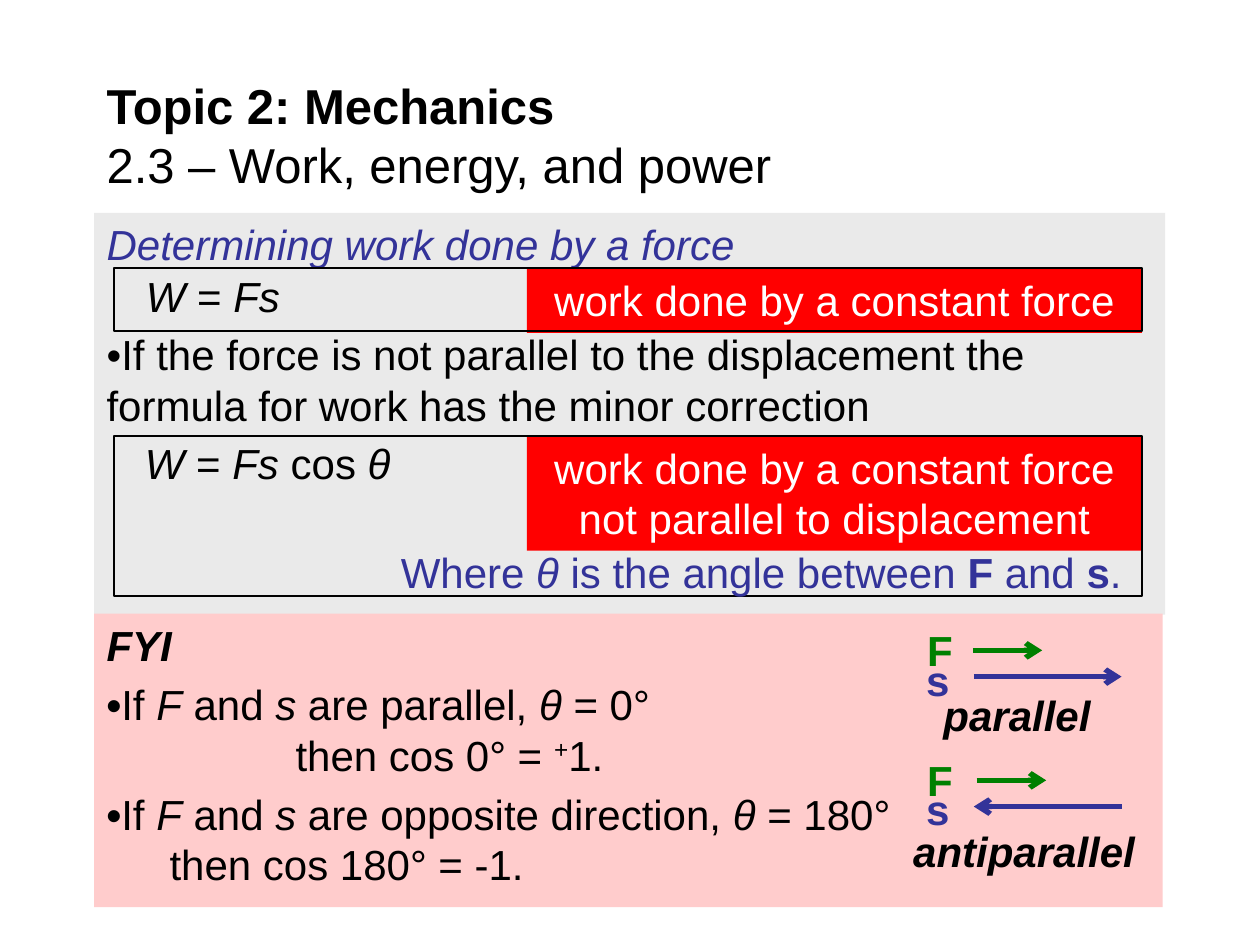
from pptx import Presentation
from pptx.dml.color import RGBColor
from pptx.enum.shapes import MSO_CONNECTOR, MSO_SHAPE
from pptx.enum.text import MSO_ANCHOR, PP_ALIGN
from pptx.oxml.ns import qn
from pptx.util import Cm, Pt
from lxml import etree

RECTANGLE = MSO_SHAPE.RECTANGLE
STRAIGHT = MSO_CONNECTOR.STRAIGHT
TOP, MIDDLE = MSO_ANCHOR.TOP, MSO_ANCHOR.MIDDLE
LEFT, CENTER, RIGHT = PP_ALIGN.LEFT, PP_ALIGN.CENTER, PP_ALIGN.RIGHT

COLORS = {
    "black": "000000",
    "white": "FFFFFF",
    "blue": "333399",
    "green": "008000",
    "red": "FF0000",
    "gray": "EAEAEA",
    "pink": "FFCCCC",
}

deck = Presentation()
deck.slide_width, deck.slide_height = Cm(25.4), Cm(19.05)
page = deck.slides.add_slide(deck.slide_layouts[6])


def add_box(place, fill=None, line=None, wrap=True, shape=True):
    """Add a rectangle or a text box at (left, top, width, height) in cm."""
    lengths = [Cm(value) for value in place]
    if shape:
        box = page.shapes.add_shape(RECTANGLE, *lengths)
        box.shadow.inherit = False
    else:
        box = page.shapes.add_textbox(*lengths)
    if fill:
        box.fill.solid()
        box.fill.fore_color.rgb = RGBColor.from_string(COLORS[fill])
    else:
        box.fill.background()
    if line:
        box.line.color.rgb = RGBColor.from_string(COLORS[line])
        box.line.width = Pt(1)
    else:
        box.line.fill.background()
    box.text_frame.word_wrap = wrap
    box.text_frame.vertical_anchor = TOP
    return box


def write(box, spans, color="black", size=24, align=LEFT, before=0, spacing=None):
    """Add a paragraph of (text, style) spans; styles: b bold, i italic, ^ raised."""
    frame = box.text_frame
    paragraph = frame.add_paragraph() if frame.text else frame.paragraphs[0]
    paragraph.alignment = align
    paragraph.space_before = Pt(before)
    if spacing:
        paragraph.line_spacing = spacing
    paragraph.font.name = "Arial"
    paragraph.font.size = Pt(size)
    paragraph.font.color.rgb = RGBColor.from_string(COLORS[color])
    for text, style in spans:
        if text == "\n":
            paragraph.add_line_break()
            continue
        span = paragraph.add_run()
        span.text = text
        span.font.bold = "b" in style
        span.font.italic = "i" in style
        if "^" in style:
            span.font._element.set("baseline", "30000")


# Main panel and title
panel = add_box((1.9, 4.29, 21.59, 8.1), fill="gray")
write(panel, [("Determining work done by a force", "i")], "blue", before=5)
write(panel, [("•If the force is not parallel to the displacement the "
               "formula for work has the minor correction", "")], before=34)

title = add_box((1.9, 1.47, 21.59, 2.49), shape=False)
title.text_frame.vertical_anchor = MIDDLE
write(title, [("Topic 2: Mechanics", "b"), ("\n", ""),
              ("2.3 – Work, energy, and power", "")], size=28)

# Formula rows: formula, its place, its meaning, top, red height, frame height
work = [("W", "i"), (" = ", "")]
formulas = [
    (work + [("Fs", "i")], (2.69, 5.44, 3.78, 0.89),
     "work done by a constant force", 5.41, 1.3, 1.27),
    (work + [("Fs ", "i"), ("cos ", ""), ("θ", "i")], (2.67, 8.81, 6.53, 0.89),
     "work done by a constant force not parallel to displacement", 8.79, 2.31, 3.23),
]
for formula, place, meaning, top, red_height, frame_height in formulas:
    write(add_box(place, shape=False), formula, before=5, spacing=0.9)
    label = add_box((10.62, top, 12.4, red_height), fill="red")
    write(label, [(meaning, "")], "white", align=CENTER)
    add_box((2.3, top, 20.73, frame_height), line="black")

angle_note = add_box((3, 11, 19.86, 1.07), shape=False)
write(angle_note, [("Where ", ""), ("θ", "i"), (" is the angle between ", ""),
                   ("F", "b"), (" and ", ""), ("s", "b"), (".", "")],
      "blue", align=RIGHT, before=5, spacing=0.9)

# FYI panel
fyi = add_box((1.9, 12.37, 21.54, 5.92), fill="pink")
write(fyi, [("FYI", "bi")], before=5)
cases = [
    ("parallel", "0°", [("\t\t\tthen cos 0° = ", ""), ("+", "^"), ("1.", "")]),
    ("opposite direction", "180°", [("\tthen cos 180° = -1.", "")]),
]
for relation, degrees, result in cases:
    write(fyi, [("•", "b"), ("If ", ""), ("F", "i"), (" and ", ""), ("s", "i"),
                (f" are {relation}, ", ""), ("θ", "i"), (f" = {degrees}", ""),
                ("\n", "")] + result, before=5)

# Vector pairs: name, top, label place, start of F, end of the s arrow with a head
pairs = [
    ("parallel", 12.47, (18.77, 13.77, 3.51, 1.3), 19.61, "tailEnd"),
    ("antiparallel", 15.09, (18.16, 16.51, 5.03, 1.3), 19.69, "headEnd"),
]
for name, top, label_place, force_start, displacement_head in pairs:
    arrows = [
        ("green", force_start, force_start + 1.4, top + 0.64, "tailEnd"),
        ("blue", 19.63, 22.61, top + 1.17, displacement_head),
    ]
    for color, start, end, height, head in arrows:
        arrow = page.shapes.add_connector(
            STRAIGHT, Cm(start), Cm(height), Cm(end), Cm(height))
        arrow.line.color.rgb = RGBColor.from_string(COLORS[color])
        arrow.line.width = Pt(3)
        etree.SubElement(arrow.line._get_or_add_ln(), qn(f"a:{head}"), type="arrow")
        etree.SubElement(arrow._element.spPr, qn("a:effectLst"))
    labels = [
        ("F", (18.44, top, 1.04, 1.3), "green", "b"),
        ("s", (18.42, top + 0.59, 0.99, 1.3), "blue", "b"),
        (name, label_place, "black", "bi"),
    ]
    for text, place, color, style in labels:
        write(add_box(place, wrap=False, shape=False), [(text, style)], color)

deck.save("out.pptx")
